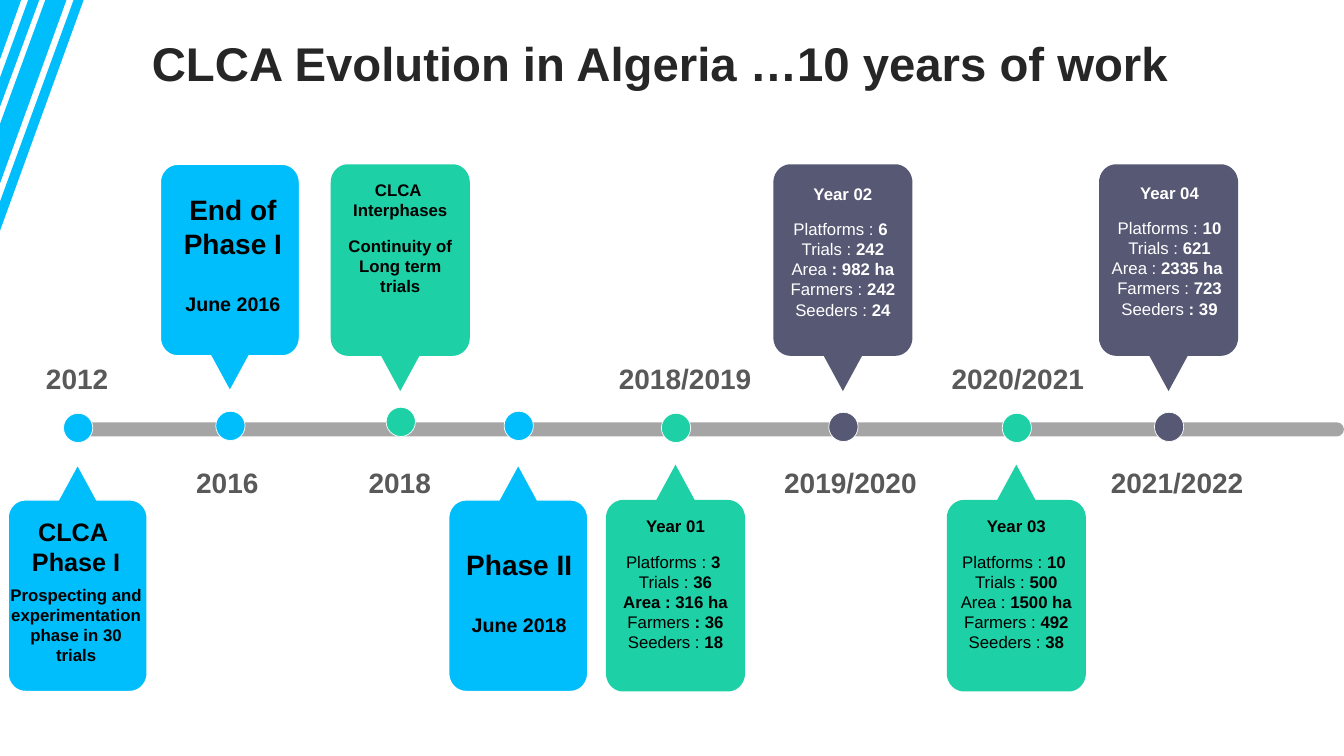
from math import cos, radians, sin

from lxml import etree
from pptx import Presentation
from pptx.dml.color import RGBColor
from pptx.enum.shapes import MSO_SHAPE
from pptx.enum.text import MSO_ANCHOR, MSO_AUTO_SIZE, PP_ALIGN
from pptx.oxml.ns import qn
from pptx.util import Inches, Pt

OVAL, ROUND = MSO_SHAPE.OVAL, MSO_SHAPE.ROUNDED_RECTANGLE
CENTER = PP_ALIGN.CENTER
TOP, MIDDLE = MSO_ANCHOR.TOP, MSO_ANCHOR.MIDDLE
GROW, FIXED = MSO_AUTO_SIZE.SHAPE_TO_FIT_TEXT, MSO_AUTO_SIZE.NONE
COLORS = {
    "blue": "00BDFB", "green": "1ED0A6", "slate": "565874", "bar": "808080",
    "title": "262626", "year": "595959", "black": "000000", "white": "FFFFFF",
}

deck = Presentation()
deck.slide_width, deck.slide_height = Inches(13.33), Inches(7.5)
slide = deck.slides.add_slide(deck.slide_layouts[5])
shapes = slide.shapes


def color(name):
    return RGBColor.from_string(COLORS[name])


def paint(shape, fill, edge=0):
    """Fill a shape, with a white edge of the given points or none."""
    shape.shadow.inherit = False
    shape.fill.solid()
    shape.fill.fore_color.rgb = color(fill)
    if edge:
        shape.line.color.rgb = color("white")
        shape.line.width = Pt(edge)
    else:
        shape.line.fill.background()


def text(lines, place, size=12, ink="black", tail=None, holder=None,
         anchor=TOP, fit=GROW, space=None):
    """Write bold lines; words before a bar are regular. tail sizes the last line."""
    box = holder or shapes.add_textbox(0, 0, 0, 0)
    box.left, box.top, box.width, box.height = [Inches(n) for n in place]
    frame = box.text_frame
    frame.word_wrap, frame.auto_size = True, fit
    frame.vertical_anchor = anchor
    for i, line in enumerate(lines):
        para = frame.paragraphs[0] if i == 0 else frame.add_paragraph()
        para.alignment = CENTER
        para.line_spacing = space
        last = tail and i == len(lines) - 1
        if last:
            para.space_before = Pt(23)
        plain, _, strong = line.rpartition("|")
        for words, bold in ((plain, False), (strong, True)):
            if words:
                run = para.add_run()
                run.text = words
                font = run.font
                font.name, font.bold = "Arial", bold
                font.size = Pt(tail if last else size)
                font.color.rgb = color(ink)


# Corner stripes
stripes = [
    [(0.73, 0), (0.83, 0), (0, 2.29), (0, 2)],
    [(0.39, 0), (0, 1.06), (0, 0.77), (0.28, 0)],
    [(0.66, 0), (0, 1.82), (0, 1.23), (0.45, 0)],
    [(0, 0), (0.21, 0), (0, 0.59)],
]
pen = shapes.build_freeform(Inches(0.73), 0)
for i, stripe in enumerate(stripes):
    spots = [(Inches(x), Inches(y)) for x, y in stripe]
    if i:
        pen.move_to(*spots[0])
    pen.add_line_segments(spots[1:], close=True)
paint(pen.convert_to_shape(), "blue")

text(["CLCA Evolution in Algeria …10 years of work"], (1.22, 0.3, 10.67, 0.79),
     size=33.8, ink="title", holder=shapes.title, anchor=MIDDLE, fit=FIXED, space=0.7)

# Time bar
bar = shapes.add_shape(ROUND, Inches(0.67), Inches(4.19), Inches(12.66), Inches(0.14))
bar.adjustments[0] = 0.5
paint(bar, "bar")
tint = bar.fill._xPr.find(qn("a:solidFill"))[0]
etree.SubElement(tint, qn("a:alpha")).set("val", "70000")

# Right half of a callout, as offsets from its tip
half = [(0, 0), (0.19, 0.35)]
for mid, start in ((0.53, -90), (2.07, 0)):
    for step in range(0, 91, 10):
        turn = radians(start + step)
        half.append((0.52 + 0.17 * cos(turn), mid + 0.18 * sin(turn)))
rim = half + [(-x, y) for x, y in reversed(half[1:])]

# Center, side, fill, dot top, year, year center
events = [
    (0.77, "low", "blue", 4.1, "2012", 0.77),
    (2.28, "high", "blue", 4.08, "2016", 2.26),
    (3.97, "high", "green", 4.04, "2018", 3.97),
    (5.14, "low", "blue", 4.08, None, None),
    (6.7, "low", "green", 4.1, "2018/2019", 6.8),
    (8.36, "high", "slate", 4.09, "2019/2020", 8.44),
    (10.08, "low", "green", 4.1, "2020/2021", 10.1),
    (11.59, "high", "slate", 4.09, "2021/2022", 11.68),
]
for mid, side, fill, top, year, spot in events:
    tip, way = (4.61, 1) if side == "low" else (3.88, -1)
    points = [(Inches(mid + x), Inches(tip + way * y)) for x, y in rim]
    pen = shapes.build_freeform(*points[0])
    pen.add_line_segments(points[1:], close=True)
    paint(pen.convert_to_shape(), fill, edge=1 if fill == "blue" else 0)
    dot = shapes.add_shape(OVAL, Inches(mid - 0.14), Inches(top), Inches(0.29), Inches(0.29))
    paint(dot, fill, edge=0.5)
    if year:
        level = 3.54 if side == "low" else 4.57
        text([year], (spot - 0.78, level, 1.55, 0.44), size=20, ink="year")

# Phases
text(["CLCA ", "Phase I"], (0, 5.07, 1.51, 0.71), size=18)
text(["Prospecting and experimentation phase in 30 trials"], (0, 5.75, 1.51, 0.91))
text(["End of Phase I", "June 2016"], (1.62, 1.86, 1.38, 1.38), size=20, tail=14)
text(["CLCA ", "Interphases"], (3.28, 1.73, 1.38, 0.5))
text(["Continuity of Long term trials"], (3.28, 2.29, 1.38, 0.71))
text(["Phase II", "June 2018"], (4.46, 5.38, 1.38, 1.01), size=20, tail=14)

# Yearly results
years = [
    ("Year 01", 6.01, 5.07, "black", [
        "Platforms : |3 ", "Trials : |36", "Area : 316 ha", "Farmers |: 36", "Seeders : |18"]),
    ("Year 02", 7.67, 1.77, "white", [
        "Platforms : |6 ", "Trials : |242", "Area |: 982 ha", "Farmers : |242", "Seeders : |24"]),
    ("Year 03", 9.39, 5.07, "black", [
        "Platforms : |10 ", "Trials : |500", "Area : |1500 ha", "Farmers : |492", "Seeders : |38"]),
    ("Year 04", 10.91, 1.76, "white", [
        "Platforms : |10", "Trials : |621", "Area : |2335 ha ", "Farmers : |723", "Seeders |: 39"]),
]
for name, left, top, ink, facts in years:
    text([name], (left, top, 1.38, 0.3), ink=ink)
    text(facts, (left, top + 0.35, 1.38, 1.11), ink=ink)

deck.save("out.pptx")
